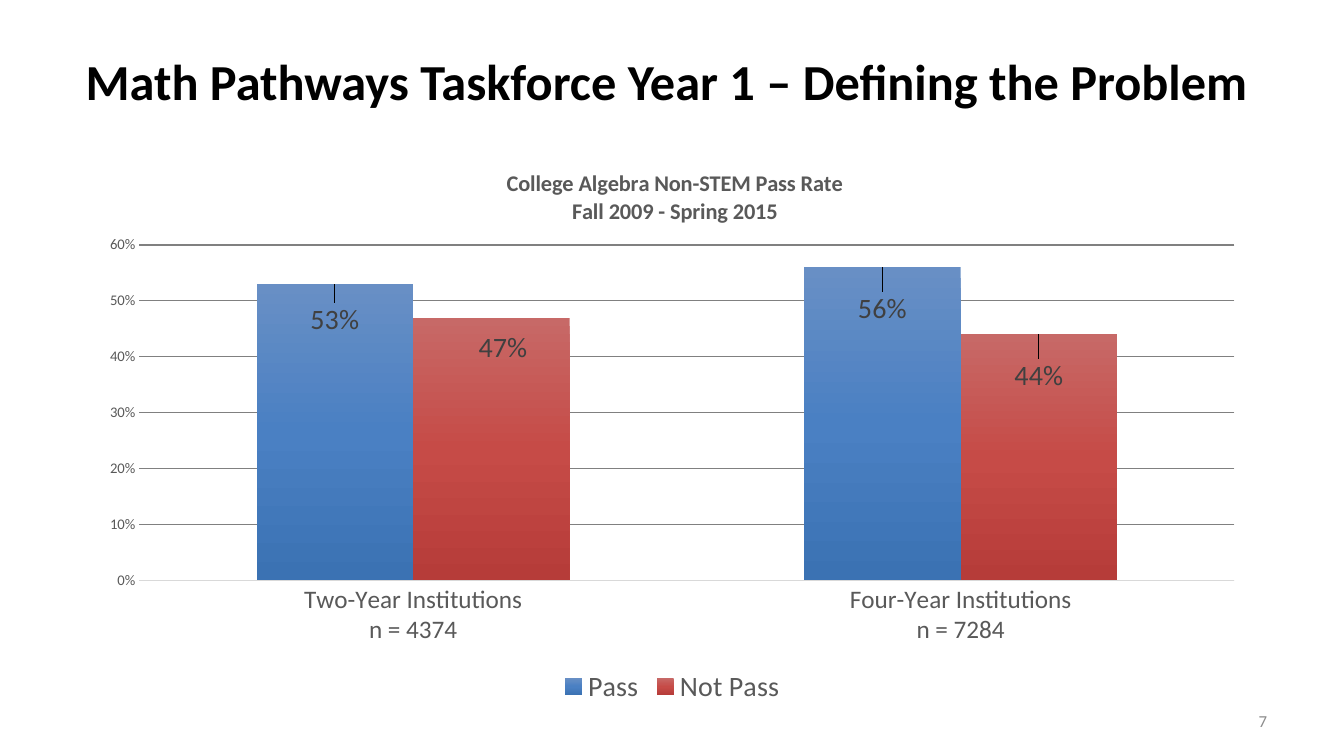
from dataclasses import dataclass

from lxml import etree
from copy import deepcopy
from pptx import Presentation
from pptx.chart.data import CategoryChartData
from pptx.dml.color import RGBColor
from pptx.enum.chart import XL_CHART_TYPE, XL_LABEL_POSITION, XL_LEGEND_POSITION, XL_TICK_MARK
from pptx.enum.text import MSO_ANCHOR, PP_ALIGN
from pptx.oxml.ns import qn
from pptx.util import Pt

CLUSTERED = XL_CHART_TYPE.COLUMN_CLUSTERED
OUTSIDE_END = XL_LABEL_POSITION.OUTSIDE_END
LEGEND_BOTTOM = XL_LEGEND_POSITION.BOTTOM
NO_TICK = XL_TICK_MARK.NONE
TOP, MIDDLE = MSO_ANCHOR.TOP, MSO_ANCHOR.MIDDLE
LEFT, RIGHT = PP_ALIGN.LEFT, PP_ALIGN.RIGHT

FONT = "Calibri"
BLACK, DARK, GREY, PALE = "000000", "404040", "595959", "8C8C8C"
PERCENT = "0%"


@dataclass
class Outcome:
    name: str
    rates: tuple[float, ...]
    gradient: tuple[str, str, str]
    label_shifts: tuple[tuple[float, float], ...]  # fractions of the chart


INSTITUTIONS = ["Two-Year Institutions\nn = 4374", "Four-Year Institutions\nn = 7284"]
OUTCOMES = [
    Outcome("Pass", (0.53, 0.56), ("688FC5", "4A80C3", "3B72B3"), ((0, 0.1), (0, 0.11))),
    Outcome("Not Pass", (0.47, 0.44), ("C76967", "C64B47", "B63C39"), ((0.01, 0.09), (0, 0.11))),
]


def rgb(value: str) -> RGBColor:
    return RGBColor.from_string(value)


def set_font(font, size: float, color: str, bold: bool = False) -> None:
    font.name, font.size, font.bold = FONT, Pt(size), bold
    font.color.rgb = rgb(color)


def add_layout(parent, index: int, **settings) -> None:
    """Give a chart part a manual layout."""
    for old in parent.findall(qn("c:layout")):
        parent.remove(old)
    layout = etree.Element(qn("c:layout"))
    manual = etree.SubElement(layout, qn("c:manualLayout"))
    for tag, value in settings.items():
        etree.SubElement(manual, qn(f"c:{tag}")).set("val", str(value))
    parent.insert(index, layout)


def fill_gradient(series, colors: tuple[str, str, str]) -> None:
    fill = series.format.fill
    fill.gradient()
    fill.gradient_angle = 270
    stop_list = next(series._element.iter(qn("a:gsLst")))
    stop_list.append(deepcopy(stop_list[-1]))
    for stop, color, position in zip(fill.gradient_stops, colors, (0, 0.5, 1)):
        stop.color.rgb = rgb(color)
        stop.position = position


def label_points(series, shifts: tuple[tuple[float, float], ...]) -> None:
    labels = series.data_labels
    labels.show_value = True
    labels.number_format, labels.number_format_is_linked = PERCENT, False
    labels.position = OUTSIDE_END
    set_font(labels.font, 20, DARK)
    for index, (dx, dy) in enumerate(shifts):
        label = series.points[index].data_label
        set_font(label.font, 20, DARK)
        label.position = OUTSIDE_END
        element = next(item for item in labels._element.findall(qn("c:dLbl"))
                       if item.find(qn("c:idx")).get("val") == str(index))
        add_layout(element, 1, x=dx, y=dy)
        number_format = etree.Element(qn("c:numFmt"), formatCode=PERCENT, sourceLinked="0")
        element.insert(2, number_format)


def add_pass_rates(slide) -> None:
    data = CategoryChartData(number_format=PERCENT)
    data.categories = INSTITUTIONS
    for outcome in OUTCOMES:
        data.add_series(outcome.name, outcome.rates)
    chart = slide.shapes.add_chart(CLUSTERED, Pt(61.92), Pt(102.24), Pt(836.64), Pt(404.64), data).chart
    set_font(chart.font, 10, BLACK)

    # Heading of the chart
    heading = chart.chart_title
    heading.text_frame.text = "College Algebra Non-STEM Pass Rate\nFall 2009 - Spring 2015"
    for paragraph in heading.text_frame.paragraphs:
        set_font(paragraph.font, 16, GREY, bold=True)
    add_layout(heading._element, 1, xMode="edge", yMode="edge", x=0.356, y=0.04)

    # Axes and plot area
    institutions, rates = chart.category_axis, chart.value_axis
    for axis, size in ((institutions, 18), (rates, 10.5)):
        axis.major_tick_mark = axis.minor_tick_mark = NO_TICK
        set_font(axis.tick_labels.font, size, GREY)
    institutions.format.line.color.rgb = rgb("D9D9D9")
    institutions.format.line.width = Pt(1)
    rates.minimum_scale, rates.maximum_scale, rates.major_unit = 0, 0.6, 0.1
    rates.tick_labels.number_format = PERCENT
    rates.tick_labels.number_format_is_linked = False
    rates.format.line.fill.background()
    rates.major_gridlines.format.line.color.rgb = rgb("808080")
    rates.major_gridlines.format.line.width = Pt(0.75)
    plot_area = next(chart._chartSpace.iter(qn("c:plotArea")))
    add_layout(plot_area, 0, layoutTarget="inner", xMode="edge", yMode="edge",
               x=0.045, y=0.18, w=0.935, h=0.592)

    # Columns
    columns = chart.plots[0]
    columns.gap_width, columns.overlap, columns.vary_by_categories = 150, 0, False
    for series, outcome in zip(columns.series, OUTCOMES):
        fill_gradient(series, outcome.gradient)
        label_points(series, outcome.label_shifts)

    # Legend
    chart.has_legend = True
    chart.legend.position = LEGEND_BOTTOM
    chart.legend.include_in_layout = False
    set_font(chart.legend.font, 20, GREY)


def write_line(shape, text: str, size: float, color: str, align, anchor, bold: bool = False) -> None:
    frame = shape.text_frame
    frame.word_wrap = True
    frame.vertical_anchor = anchor
    frame.text = text
    frame.paragraphs[0].alignment = align
    set_font(frame.paragraphs[0].font, size, color, bold)


def main() -> None:
    deck = Presentation()
    deck.slide_width, deck.slide_height = Pt(960), Pt(540)
    slide = deck.slides.add_slide(deck.slide_layouts[5])

    # Title
    title = slide.shapes.title
    title.left, title.top, title.width, title.height = Pt(54), Pt(32.4), Pt(880.56), Pt(51.12)
    write_line(title, "Math Pathways Taskforce Year 1 – Defining the Problem", 36, BLACK, LEFT, TOP, bold=True)

    # Chart
    add_pass_rates(slide)

    # Page number
    page_number = slide.shapes.add_textbox(Pt(688.32), Pt(500.4), Pt(223.92), Pt(28.8))
    write_line(page_number, "7", 12, PALE, RIGHT, MIDDLE)

    deck.save("out.pptx")


if __name__ == "__main__":
    main()
